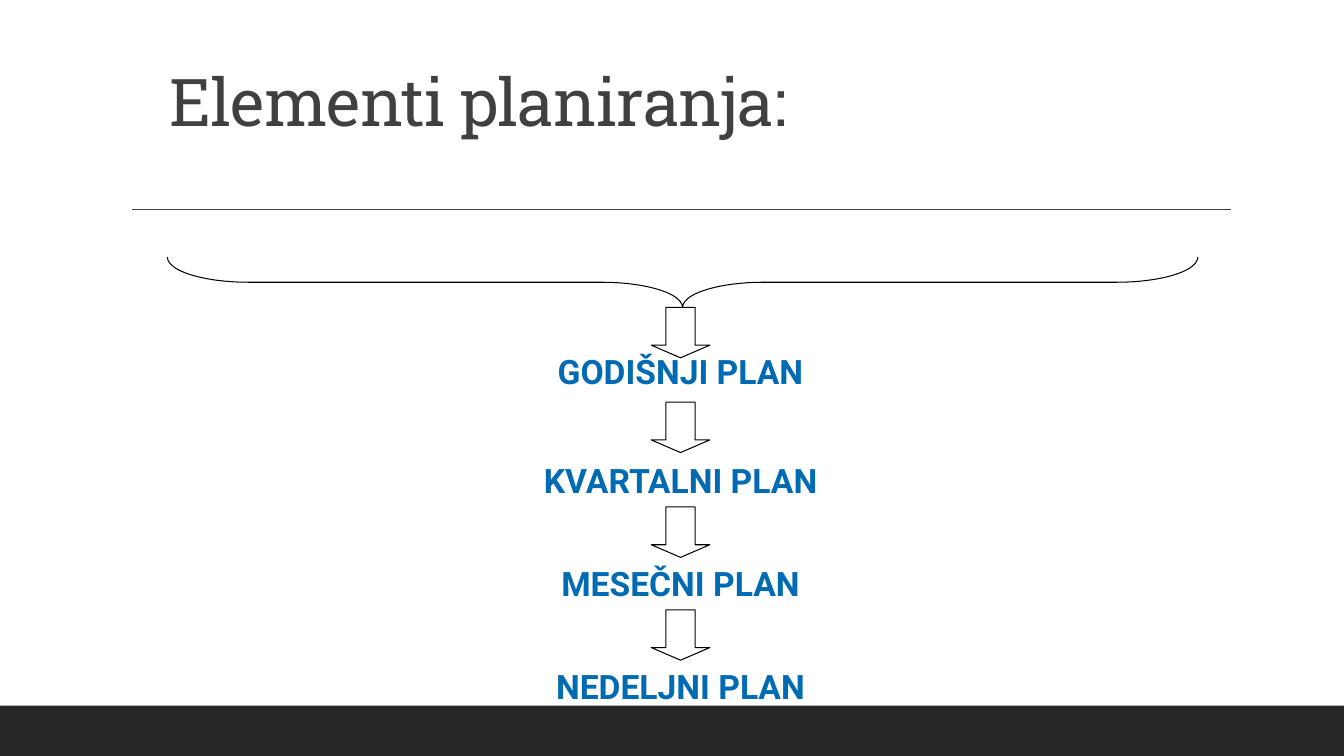
import pptx
import pptx.util
import pptx.dml.color
import pptx.enum.shapes
import pptx.enum.text
import lxml.etree

TITLE = "Elementi planiranja:"
# plan name, top of its arrow, top of its label
PLANS = [
    ("GODIŠNJI PLAN", 3.05, 3.43),
    ("KVARTALNI PLAN", 3.99, 4.51),
    ("MESEČNI PLAN", 5.03, 5.54),
    ("NEDELJNI PLAN", 6.05, 6.56),
]
COLORS = {"bar": "262626", "title": "404040", "plan": "006AB3", "edge": "000000"}
WIDE, HIGH = 13.33, 7.5
MID = 6.75
ROW = 0.5

inch, pt = pptx.util.Inches, pptx.util.Pt
kinds = pptx.enum.shapes.MSO_SHAPE
aligns = pptx.enum.text.PP_ALIGN
anchors = pptx.enum.text.MSO_ANCHOR

deck = pptx.Presentation()
deck.slide_width, deck.slide_height = inch(WIDE), inch(HIGH)
slide = deck.slides.add_slide(deck.slide_layouts[6])


def color(name):
    return pptx.dml.color.RGBColor.from_string(COLORS[name])


def shape(kind, x, y, w, h, fill=None):
    item = slide.shapes.add_shape(kind, inch(x), inch(y), inch(w), inch(h))
    item.shadow.inherit = False
    if fill:
        item.fill.solid()
        item.fill.fore_color.rgb = color(fill)
        item.line.fill.background()
    else:
        item.fill.background()
        item.line.color.rgb = color("edge")
        item.line.width = pt(0.75)
    return item


def label(text, x, y, w, h, size, face, tint):
    frame = slide.shapes.add_textbox(inch(x), inch(y), inch(w), inch(h)).text_frame
    frame.word_wrap = True
    para = frame.paragraphs[0]
    para.text = text
    para.font.size, para.font.name = pt(size), face
    para.font.color.rgb = color(tint)
    return frame, para


# Footer bar and rule under the title
shape(kinds.RECTANGLE, 0, HIGH - ROW, WIDE, ROW, "bar")
rule = slide.shapes.add_connector(
    pptx.enum.shapes.MSO_CONNECTOR.STRAIGHT,
    inch(1.31), inch(2.08), inch(12.21), inch(2.08))
rule.line.color.rgb = color("title")
rule.line.width = pt(1)
lxml.etree.SubElement(rule._element.spPr, pptx.oxml.ns.qn("a:effectLst"))

# Title
frame, para = label(TITLE, 1.58, 0.53, 8.61, 0.92, 47, "Roboto Slab", "title")
frame.vertical_anchor = anchors.BOTTOM
para.line_spacing = 0.9
para.runs[0]._r.get_or_add_rPr().set("spc", "-50")

# Chain of plans, each below its arrow
for name, top, base in PLANS:
    arrow = shape(kinds.DOWN_ARROW, MID - 0.29, top, 0.58, ROW)
    arrow.adjustments[0], arrow.adjustments[1] = 0.5, 0.25
    frame, para = label(name, MID - 1.67, base, 3.34, ROW, 24, "Roboto", "plan")
    para.alignment = aligns.CENTER
    para.font.bold = True

# Brace across the slide, pointing down at the chain
brace = shape(kinds.LEFT_BRACE, 6.52, -2.31, ROW, 10.22)
brace.rotation = 270
brace.adjustments[0], brace.adjustments[1] = 1.61, 0.5

deck.save("out.pptx")
